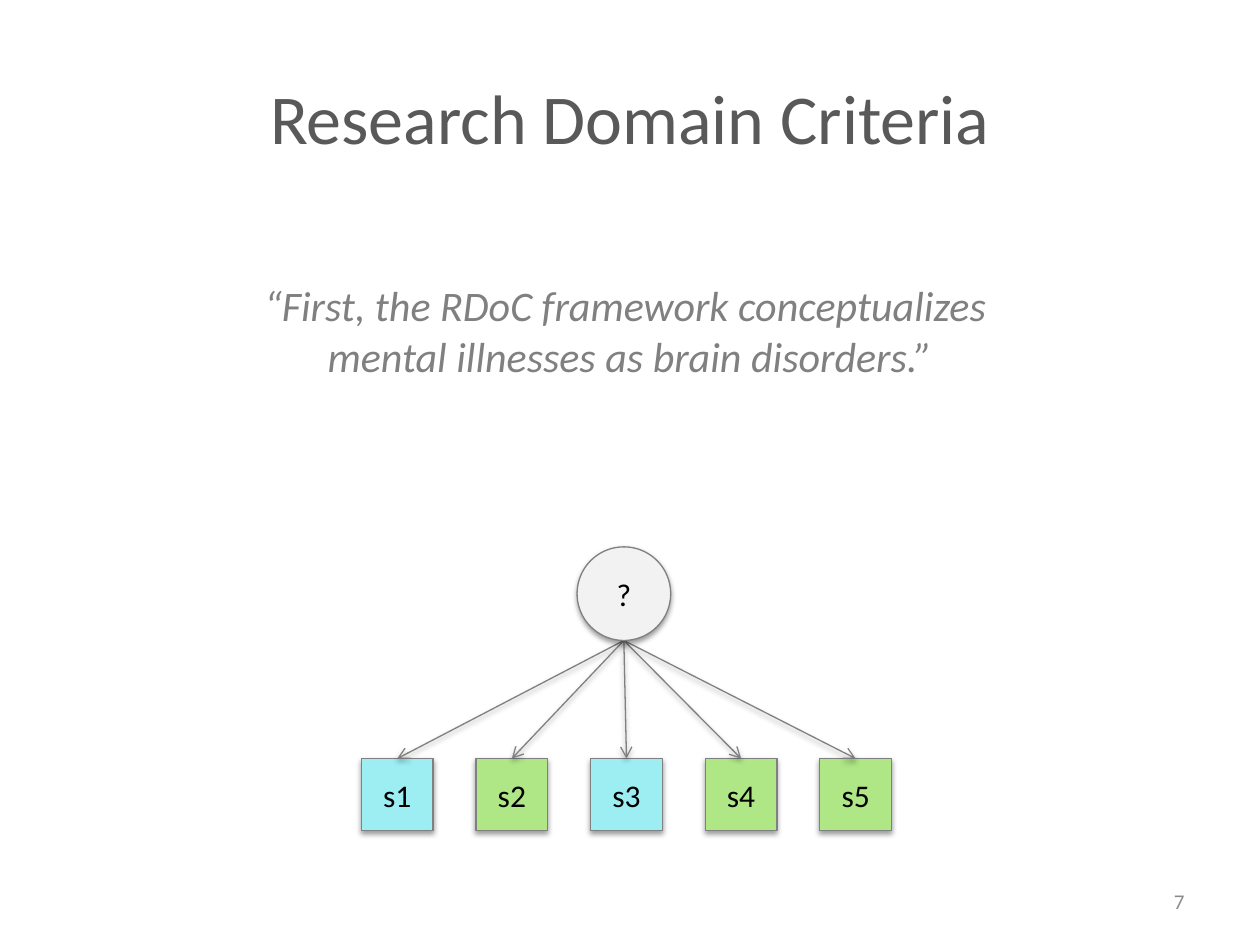
import pptx
from pptx.dml.color import RGBColor
from pptx.enum.shapes import MSO_CONNECTOR, MSO_SHAPE
from pptx.enum.text import MSO_ANCHOR, PP_ALIGN
from pptx.oxml import parse_xml
from pptx.oxml.ns import nsdecls, qn
from pptx.util import Pt

COLORS = {
    "title": "595959", "quote": "808080", "number": "8C8C8C", "text": "000000",
    "line": "808080", "cause": "F2F2F2", "blue": "9CEEF3", "green": "AFE686",
}


def rgb(name):
    return RGBColor.from_string(COLORS[name])


def write(tf, text, size, color, align=PP_ALIGN.CENTER, anchor=MSO_ANCHOR.MIDDLE,
          italic=False):
    tf.word_wrap = True
    tf.vertical_anchor = anchor
    p = tf.paragraphs[0]
    p.text = text
    p.alignment = align
    for r in p.runs:
        r.font.name = "Calibri"
        r.font.size = Pt(size)
        r.font.italic = italic
        r.font.color.rgb = rgb(color)


def outline_and_shadow(sp):
    """Give a shape or connector the thin grey line and the soft shadow below."""
    sp.line.color.rgb = rgb("line")
    sp.line.width = Pt(0.75)
    sp._element.spPr.append(parse_xml(
        f'<a:effectLst {nsdecls("a")}><a:outerShdw blurRad="{Pt(3.1)}" '
        f'dist="{Pt(1.6)}" dir="5400000" rotWithShape="0"><a:srgbClr val="000000">'
        '<a:alpha val="38000"/></a:srgbClr></a:outerShdw></a:effectLst>'))


def add_node(s, kind, text, fill, left, top, size):
    sp = s.shapes.add_shape(kind, Pt(left), Pt(top), Pt(size), Pt(size))
    sp.fill.solid()
    sp.fill.fore_color.rgb = rgb(fill)
    outline_and_shadow(sp)
    write(sp.text_frame, text, 18, "text")
    return sp


def add_arrow(s, x, y, target):
    """Draw an arrow from a point to the top of the target."""
    cxn = s.shapes.add_connector(MSO_CONNECTOR.STRAIGHT, Pt(x), Pt(y), Pt(x), Pt(y))
    cxn.end_connect(target, 0)
    outline_and_shadow(cxn)
    ln = cxn._element.spPr.find(qn("a:ln"))
    ln.append(parse_xml(f'<a:tailEnd {nsdecls("a")} type="arrow"/>'))


def add_title(s, left, top, width, height):
    sp = s.shapes.title
    sp.left, sp.top, sp.width, sp.height = Pt(left), Pt(top), Pt(width), Pt(height)
    write(sp.text_frame, "Research Domain Criteria", 40, "title")


def add_quote(s, left, top, width, height):
    sp = s.shapes.add_textbox(Pt(left), Pt(top), Pt(width), Pt(height))
    sp.text_frame.margin_top = Pt(34)
    write(sp.text_frame,
          "“First, the RDoC framework conceptualizes \vmental illnesses as brain disorders.”",
          24, "quote", anchor=MSO_ANCHOR.TOP, italic=True)


def add_page_number(s, left, top, width, height):
    sp = s.shapes.add_textbox(Pt(left), Pt(top), Pt(width), Pt(height))
    write(sp.text_frame, "7", 12, "number", align=PP_ALIGN.RIGHT)


def add_cause_diagram(s, left, top, width, height):
    """Place one unknown cause above a row of symptoms, with arrows between."""
    fills = ["blue", "green", "blue", "green", "green"]
    side, diameter = 41, 53.5
    pitch = (width - side) / (len(fills) - 1)
    symptoms = [
        add_node(s, MSO_SHAPE.RECTANGLE, f"s{i + 1}", fill,
                 left + i * pitch, top + height - side, side)
        for i, fill in enumerate(fills)]
    center = left + width / 2 - 1.5
    for sp in symptoms:
        add_arrow(s, center, top + diameter, sp)
    add_node(s, MSO_SHAPE.OVAL, "?", "cause", center - diameter / 2, top, diameter)


def main():
    prs = pptx.Presentation()
    prs.slide_width, prs.slide_height = Pt(720), Pt(540)
    s = prs.slides.add_slide(prs.slide_layouts[5])
    add_title(s, 36, 21.6, 648, 90)
    add_quote(s, 36, 126, 648, 356.4)
    add_page_number(s, 516, 500.5, 168, 28.8)
    add_cause_diagram(s, 206.5, 312.5, 303, 162)
    prs.save("out.pptx")


if __name__ == "__main__":
    main()
